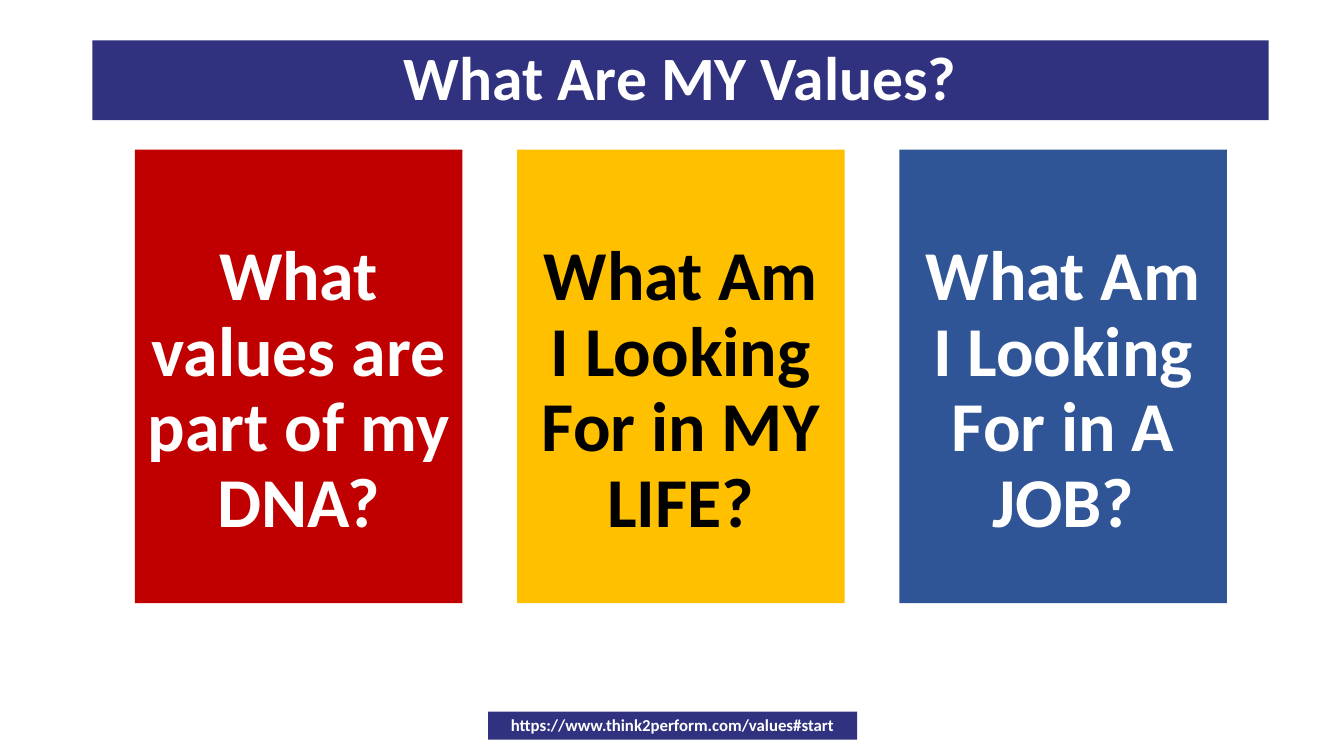
from pptx import Presentation
from pptx.dml.color import RGBColor
from pptx.enum.shapes import MSO_SHAPE
from pptx.enum.text import MSO_ANCHOR, MSO_AUTO_SIZE, PP_ALIGN
from pptx.util import Cm, Pt

NAVY = RGBColor(0x30, 0x31, 0x7F)
RED = RGBColor(0xC0, 0x00, 0x00)
GOLD = RGBColor(0xFF, 0xC0, 0x00)
BLUE = RGBColor(0x2F, 0x55, 0x97)
WHITE = RGBColor(0xFF, 0xFF, 0xFF)
BLACK = RGBColor(0x00, 0x00, 0x00)

QUESTIONS = [
    ("What values are part of my DNA?", RED, WHITE),
    ("What Am I Looking For in MY LIFE?", GOLD, BLACK),
    ("What Am I Looking For in A JOB?", BLUE, WHITE),
]


def write_centred(panel, wording, size, fill, ink):
    panel.fill.solid()
    panel.fill.fore_color.rgb = fill
    frame = panel.text_frame
    frame.text = wording
    frame.word_wrap = True
    frame.auto_size = MSO_AUTO_SIZE.NONE
    frame.vertical_anchor = MSO_ANCHOR.MIDDLE
    sentence = frame.paragraphs[0]
    sentence.alignment = PP_ALIGN.CENTER
    sentence.line_spacing = 0.9
    font = sentence.runs[0].font
    font.name = "Calibri"
    font.size = Pt(size)
    font.bold = True
    font.color.rgb = ink


def add_panel(slide, left, top, width, height):
    panel = slide.shapes.add_shape(
        MSO_SHAPE.RECTANGLE, Cm(left), Cm(top), Cm(width), Cm(height))
    panel.shadow.inherit = False
    panel.line.fill.background()
    return panel


def place_heading(slide, left, top, width, height):
    heading = slide.shapes.title
    heading.left, heading.top = Cm(left), Cm(top)
    heading.width, heading.height = Cm(width), Cm(height)
    write_centred(heading, "What Are MY Values?", 44, NAVY, WHITE)


def place_questions(slide, left, top, width, height, gap=1.38):
    card_width = (width - gap * (len(QUESTIONS) - 1)) / len(QUESTIONS)
    for column, (question, fill, ink) in enumerate(QUESTIONS):
        card_left = left + column * (card_width + gap)
        card = add_panel(slide, card_left, top, card_width, height)
        write_centred(card, question, 50, fill, ink)
        card.text_frame.vertical_anchor = MSO_ANCHOR.TOP
        card.text_frame.margin_top = Cm(height * 0.2)


def place_web_address(slide, left, top, width, height):
    banner = add_panel(slide, left, top, width, height)
    write_centred(banner, "https://www.think2perform.com/values#start",
                  12, NAVY, WHITE)


def main():
    deck = Presentation()
    deck.slide_width, deck.slide_height = Cm(33.87), Cm(19.05)
    slide = deck.slides.add_slide(deck.slide_layouts[5])
    place_heading(slide, 2.33, 1.02, 29.64, 2.01)
    place_questions(slide, 3.4, 3.77, 27.52, 11.43)
    place_web_address(slide, 12.3, 17.93, 9.3, 0.71)
    deck.save("out.pptx")


if __name__ == "__main__":
    main()
